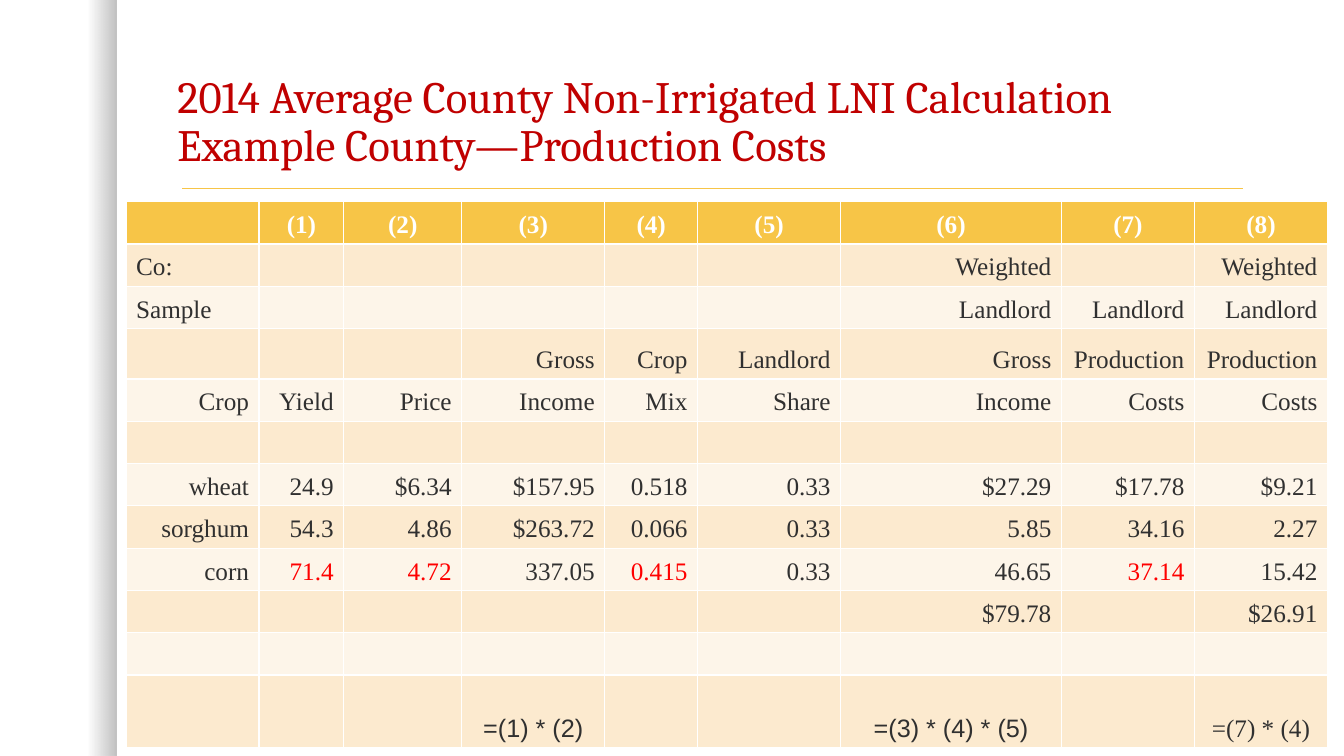
from dataclasses import dataclass

from lxml.etree import SubElement
from pptx import Presentation
from pptx.dml.color import RGBColor
from pptx.enum.shapes import MSO_CONNECTOR as Connector, MSO_SHAPE as Preset
from pptx.enum.text import MSO_ANCHOR as Anchor, MSO_AUTO_SIZE as AutoSize, PP_ALIGN as Align
from pptx.oxml.ns import qn
from pptx.util import Inches, Pt

GOLD, PEACH, CREAM = "F7C547", "FCEACF", "FDF5E9"
WHITE, INK, RED, TITLE_RED = "FFFFFF", "303030", "FF0000", "C00000"
SERIF, SANS = "Times New Roman", "Arial"

deck = Presentation()
deck.slide_width, deck.slide_height = Inches(13.33), Inches(7.5)


@dataclass(frozen=True)
class Frame:
    left: float
    top: float
    width: float
    height: float

    def place(self) -> tuple[int, int, int, int]:
        return across(self.left), down(self.top), across(self.width), down(self.height)


@dataclass(frozen=True)
class Row:
    values: tuple[str, ...]
    height: float = 5.6
    align: Align = Align.RIGHT
    first_align: Align = Align.RIGHT
    red: tuple[int, ...] = ()
    sans: tuple[int, ...] = ()


COLUMNS = (9.9, 6.3, 8.78, 10.65, 6.9, 10.65, 16.43, 9.9, 9.9)
BLANK = ("",) * len(COLUMNS)
ROWS = (
    Row(("", *(f"({number})" for number in range(1, len(COLUMNS)))), align=Align.CENTER),
    Row(("Co:", "", "", "", "", "", "Weighted", "", "Weighted"), first_align=Align.LEFT),
    Row(("Sample", "", "", "", "", "", "Landlord", "Landlord", "Landlord"), first_align=Align.LEFT),
    Row(("", "", "", "Gross", "Crop", "Landlord", "Gross", "Production", "Production"), height=6.67),
    Row(("Crop", "Yield", "Price", "Income", "Mix", "Share", "Income", "Costs", "Costs")),
    Row(BLANK),
    Row(("wheat", "24.9", "$6.34", "$157.95", "0.518", "0.33", "$27.29", "$17.78", "$9.21")),
    Row(("sorghum", "54.3", "4.86", "$263.72", "0.066", "0.33", "5.85", "34.16", "2.27")),
    Row(("corn", "71.4", "4.72", "337.05", "0.415", "0.33", "46.65", "37.14", "15.42"),
        red=(1, 2, 4, 7)),
    Row(("", "", "", "", "", "", "$79.78", "", "$26.91")),
    Row(BLANK),
    Row(("", "", "", "=(1) * (2)", "", "", "=(3) * (4) * (5)", "", "=(7) * (4)"),
        height=9.6, align=Align.CENTER, sans=(3, 6)),
)


def across(percent: float) -> int:
    return round(deck.slide_width * percent / 100)


def down(percent: float) -> int:
    return round(deck.slide_height * percent / 100)


def colour(value: str) -> RGBColor:
    return RGBColor.from_string(value)


def style_font(font, shade: str, **formats) -> None:
    for name, value in formats.items():
        setattr(font, name, value)
    font.color.rgb = colour(shade)


def draw_panel(page, frame: Frame) -> None:
    panel = page.shapes.add_shape(Preset.RECTANGLE, *frame.place())
    panel.shadow.inherit = False
    panel.line.fill.background()
    panel.fill.gradient()
    panel.fill.gradient_angle = 0
    for stop, position, opacity in zip(panel.fill.gradient_stops, (0.75, 1), (0, 25)):
        stop.position = position
        stop.color.rgb = colour("000000")
    for shade, opacity in zip(panel.element.spPr.iter(qn("a:srgbClr")), (0, 25)):
        SubElement(shade, qn("a:alpha"), val=str(opacity * 1000))


def draw_rule(page, left: float, right: float, top: float) -> None:
    rule = page.shapes.add_connector(
        Connector.STRAIGHT, across(left), down(top), across(right), down(top))
    rule.line.color.rgb = colour(GOLD)
    rule.line.width = Pt(1)
    SubElement(rule.element.spPr, qn("a:effectLst"))


def draw_title(page, frame: Frame, lines: tuple[str, ...]) -> None:
    title = page.shapes.title
    title.left, title.top, title.width, title.height = frame.place()
    box = title.text_frame
    box.word_wrap = True
    box.auto_size = AutoSize.NONE
    box.vertical_anchor = Anchor.BOTTOM
    para = box.paragraphs[0]
    para.alignment = Align.LEFT
    para.line_spacing = 0.9
    for index, line in enumerate(lines):
        if index:
            para.add_line_break()
        span = para.add_run()
        span.text = line
        style_font(span.font, TITLE_RED, name="Cambria", size=Pt(32))


def fill_cell(cell, row: Row, row_index: int, column: int) -> None:
    header = row_index == 0
    cell.fill.solid()
    cell.fill.fore_color.rgb = colour(GOLD if header else PEACH if row_index % 2 else CREAM)
    cell.vertical_anchor = Anchor.BOTTOM
    para = cell.text_frame.paragraphs[0]
    para.alignment = row.align if column else row.first_align
    if row.values[column]:
        span = para.add_run()
        span.text = row.values[column]
        shade = WHITE if header else RED if column in row.red else INK
        style_font(span.font, shade, name=SANS if column in row.sans else SERIF,
                   size=Pt(18), bold=header)


def draw_table(page, frame: Frame) -> None:
    costs = page.shapes.add_table(len(ROWS), len(COLUMNS), *frame.place()).table
    for column, width in zip(costs.columns, COLUMNS):
        column.width = across(width)
    for row_index, row in enumerate(ROWS):
        costs.rows[row_index].height = down(row.height)
        for column in range(len(COLUMNS)):
            fill_cell(costs.cell(row_index, column), row, row_index, column)


def main() -> None:
    page = deck.slides.add_slide(deck.slide_layouts[5])
    page.background.fill.solid()
    page.background.fill.fore_color.rgb = colour(WHITE)
    draw_panel(page, Frame(0, 0, 8.7, 100))
    draw_rule(page, 13.58, 92.5, 24.93)
    draw_title(page, Frame(12.45, 5.33, 80.8, 18), (
        "2014 Average County Non-Irrigated LNI Calculation",
        "Example County—Production Costs"))
    draw_table(page, Frame(9.38, 26.67, 89.42, 72))
    deck.save("out.pptx")


if __name__ == "__main__":
    main()
